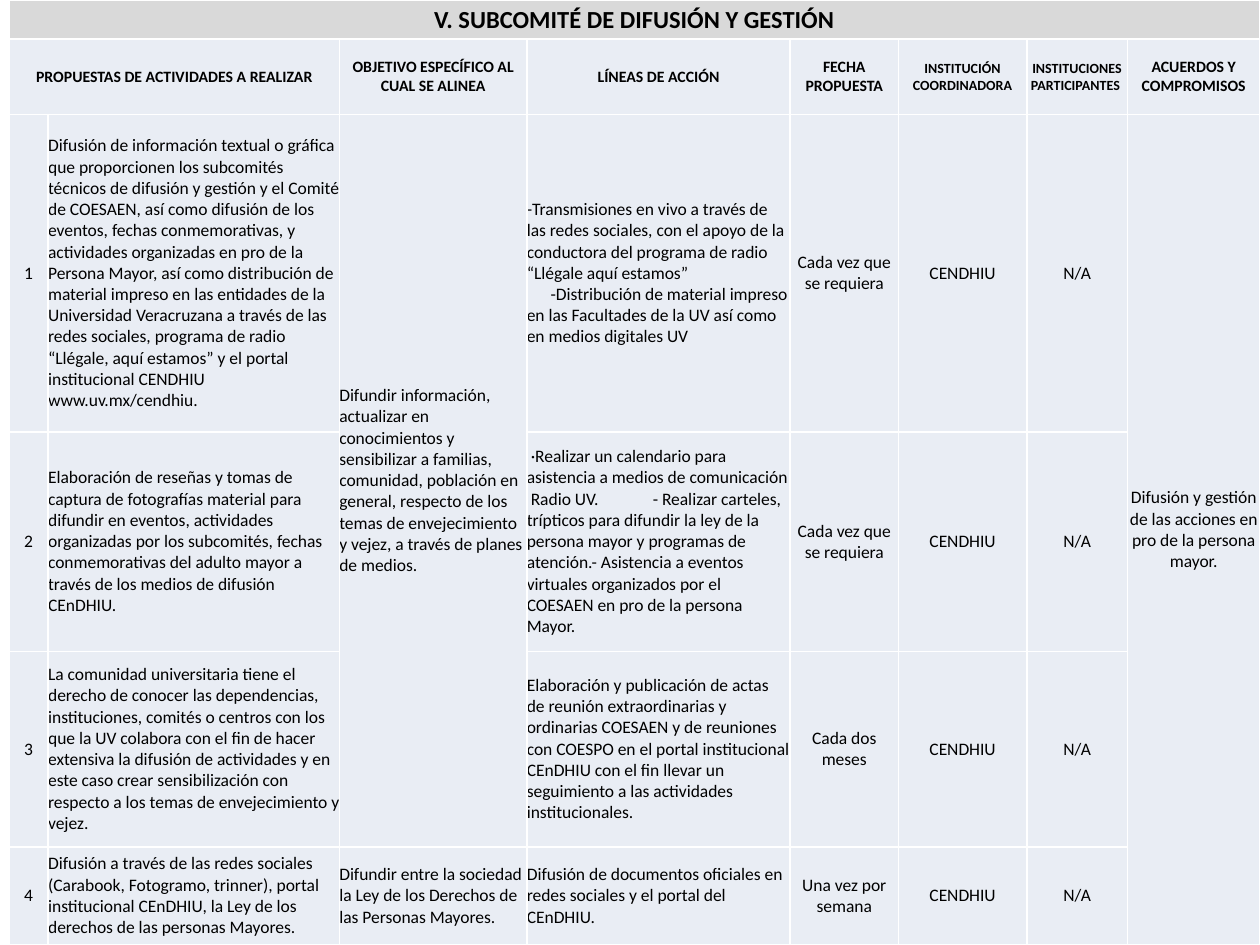
from lxml.etree import SubElement
from pptx import Presentation
from pptx.dml.color import RGBColor
from pptx.enum.text import MSO_ANCHOR, PP_ALIGN
from pptx.oxml.ns import qn
from pptx.util import Cm, Pt

BLACK = RGBColor(0x00, 0x00, 0x00)
WHITE = RGBColor(0xFF, 0xFF, 0xFF)
TITLE_GRAY = RGBColor(0xD9, 0xD9, 0xD9)
CELL_BLUE = RGBColor(0xE9, 0xED, 0xF4)

COLUMN_WIDTHS = [0.79, 5.87, 3.78, 5.31, 2.18, 2.59, 2.03, 2.67]
ROW_HEIGHTS = [0.79, 1.52, 6.4, 4.42, 3.94, 1.98]
MERGES = [((0, 0), (0, 7)), ((1, 0), (1, 1)), ((2, 2), (4, 2)), ((2, 7), (5, 7))]
LEFT_COLUMNS = (1, 2, 3)

TITLE = "V. SUBCOMITÉ DE DIFUSIÓN Y GESTIÓN"
HEADINGS = [
    (0, "PROPUESTAS DE ACTIVIDADES A REALIZAR", 9),
    (2, "OBJETIVO ESPECÍFICO AL CUAL SE ALINEA", 9),
    (3, "LÍNEAS DE ACCIÓN", 9),
    (4, "FECHA PROPUESTA", 9),
    (5, "INSTITUCIÓN COORDINADORA", 8),
    (6, "INSTITUCIONES PARTICIPANTES ", 8),
    (7, "ACUERDOS Y COMPROMISOS", 9),
]
ACTIVITIES = [
    (
        "Difusión de información textual o gráfica que proporcionen los subcomités técnicos "
        "de difusión y gestión y el Comité de COESAEN, así como difusión de los eventos, "
        "fechas conmemorativas, y actividades organizadas en pro de la Persona Mayor, así "
        "como distribución de material impreso en las entidades de la Universidad "
        "Veracruzana a través de las redes sociales, programa de radio “Llégale, aquí "
        "estamos” y el portal institucional CENDHIU www.uv.mx/cendhiu.",
        "Difundir información, actualizar en conocimientos y sensibilizar a familias, "
        "comunidad, población en general, respecto de los temas de envejecimiento y vejez, "
        "a través de planes de medios.",
        "-Transmisiones en vivo a través de las redes sociales, con el apoyo de la "
        "conductora del programa de radio “Llégale aquí estamos”\n"
        "-Distribución de material impreso en las Facultades de la UV así como en medios "
        "digitales UV",
        "Cada vez que se requiera",
    ),
    (
        "Elaboración de reseñas y tomas de captura de fotografías material para difundir en "
        "eventos, actividades organizadas por los subcomités, fechas conmemorativas del "
        "adulto mayor a través de los medios de difusión CEnDHIU.",
        "",
        "·Realizar un calendario para asistencia a medios de comunicación\n"
        "Radio UV.\t- Realizar carteles, trípticos para difundir la ley de la persona mayor "
        "y programas de atención.- Asistencia a eventos virtuales organizados por el "
        "COESAEN en pro de la persona Mayor.",
        "Cada vez que se requiera",
    ),
    (
        "La comunidad universitaria tiene el derecho de conocer las dependencias, "
        "instituciones, comités o centros con los que la UV colabora con el fin de hacer "
        "extensiva la difusión de actividades y en este caso crear sensibilización con "
        "respecto a los temas de envejecimiento y vejez.",
        "",
        "Elaboración y publicación de actas de reunión extraordinarias y ordinarias COESAEN "
        "y de reuniones con COESPO en el portal institucional CEnDHIU con el fin llevar un "
        "seguimiento a las actividades institucionales.",
        "Cada dos meses",
    ),
    (
        "Difusión a través de las redes sociales (Carabook, Fotogramo, trinner), portal "
        "institucional CEnDHIU, la Ley de los derechos de las personas Mayores.",
        "Difundir entre la sociedad la Ley de los Derechos de las Personas Mayores.",
        "Difusión de documentos oficiales en redes sociales y el portal del CEnDHIU.",
        "Una vez por semana",
    ),
]
AGREEMENT = "Difusión y gestión de las acciones en pro de la persona mayor."
LINE_INDENTS = {2: (0, 0.48), 3: (0.08, 0.08)}
TAB_POSITION = 3.95


def add_border(cell):
    properties = cell._tc.get_or_add_tcPr()
    for side in ("a:lnL", "a:lnR", "a:lnT", "a:lnB"):
        line = SubElement(properties, qn(side), w=str(Pt(1)))
        fill = SubElement(line, qn("a:solidFill"))
        SubElement(fill, qn("a:srgbClr"), val=str(WHITE))


def format_cell(cell, color):
    add_border(cell)
    cell.fill.solid()
    cell.fill.fore_color.rgb = color
    cell.vertical_anchor = MSO_ANCHOR.MIDDLE
    cell.margin_left = cell.margin_right = cell.margin_top = cell.margin_bottom = 0


def set_indent(para, indent):
    properties = para._p.get_or_add_pPr()
    properties.set("marL", "0")
    properties.set("indent", str(Cm(indent)))


def set_tab(para, position):
    tabs = SubElement(para._p.get_or_add_pPr(), qn("a:tabLst"))
    SubElement(tabs, qn("a:tab"), pos=str(Cm(position)), algn="l")


def write_cell(cell, text, size=10, bold=False, align=PP_ALIGN.CENTER, indents=()):
    frame = cell.text_frame
    for index, line in enumerate(text.split("\n")):
        para = frame.add_paragraph() if index else frame.paragraphs[0]
        para.alignment = align
        if indents:
            set_indent(para, indents[index])
        if "\t" in line:
            set_tab(para, TAB_POSITION)
        span = para.add_run()
        span.text = line
        span.font.name = "Calibri"
        span.font.size = Pt(size)
        span.font.bold = bold
        span.font.color.rgb = BLACK


def add_grid(page):
    frame = page.shapes.add_table(
        len(ROW_HEIGHTS), len(COLUMN_WIDTHS), Cm(0.18), Cm(0),
        Cm(sum(COLUMN_WIDTHS)), Cm(sum(ROW_HEIGHTS)),
    )
    table = frame.table
    table.first_row = table.horz_banding = False
    for column, width in zip(table.columns, COLUMN_WIDTHS):
        column.width = Cm(width)
    for number, (row, height) in enumerate(zip(table.rows, ROW_HEIGHTS)):
        row.height = Cm(height)
        for cell in row.cells:
            format_cell(cell, CELL_BLUE if number else TITLE_GRAY)
    for start, end in MERGES:
        table.cell(*start).merge(table.cell(*end))
    return table


def write_activity(table, row, activity):
    values = [str(row - 1), *activity, "CENDHIU", "N/A"]
    for column, text in enumerate(values):
        if text:
            align = PP_ALIGN.LEFT if column in LEFT_COLUMNS else PP_ALIGN.CENTER
            indents = LINE_INDENTS.get(row, ()) if column == 3 else ()
            write_cell(table.cell(row, column), text, align=align, indents=indents)


def main():
    deck = Presentation()
    deck.slide_width, deck.slide_height = Cm(25.4), Cm(19.05)
    page = deck.slides.add_slide(deck.slide_layouts[6])
    table = add_grid(page)
    write_cell(table.cell(0, 0), TITLE, size=14, bold=True)
    for column, text, size in HEADINGS:
        write_cell(table.cell(1, column), text, size=size, bold=True)
    for row, activity in enumerate(ACTIVITIES, start=2):
        write_activity(table, row, activity)
    write_cell(table.cell(2, 7), AGREEMENT)
    deck.save("out.pptx")


if __name__ == "__main__":
    main()
